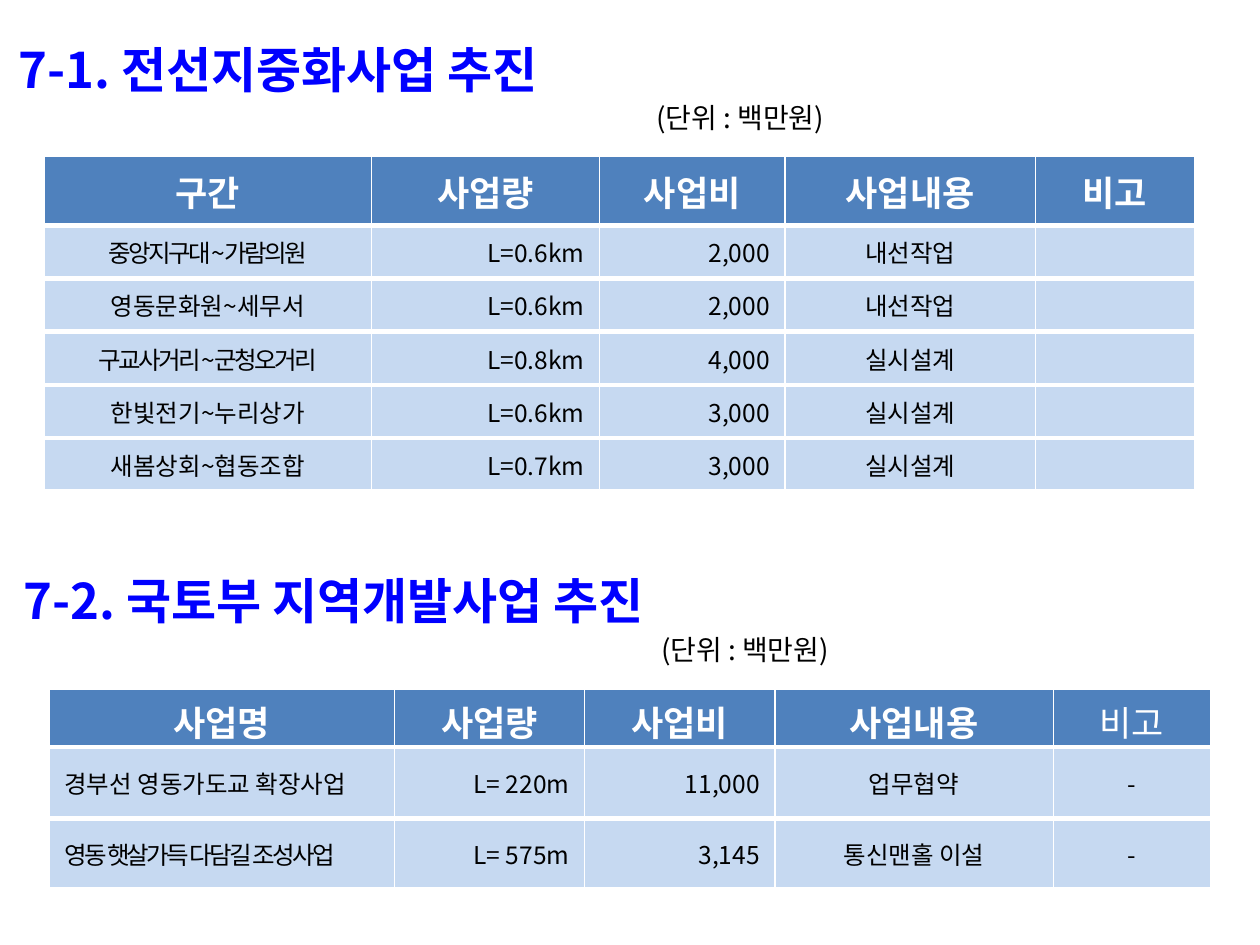
import pptx
import pptx.util
import pptx.dml.color
import pptx.enum.text
import pptx.oxml
import pptx.oxml.ns
from dataclasses import dataclass

Inches, Pt = pptx.util.Inches, pptx.util.Pt
Align = pptx.enum.text.PP_ALIGN
Anchor = pptx.enum.text.MSO_ANCHOR
LEFT, CENTER, RIGHT = Align.LEFT, Align.CENTER, Align.RIGHT


@dataclass(frozen=True)
class Theme:
    font: str = "Noto Sans CJK KR"
    heading: str = "0000FF"
    ink: str = "000000"
    paper: str = "FFFFFF"
    header_fill: str = "4F81BD"
    body_fill: str = "C6D9F1"
    heading_size: int = 28
    unit_size: int = 16
    header_size: int = 20
    body_size: int = 14
    tight: int = -150
    thin: int = 1
    thick: int = 3


THEME = Theme()
UNIT = "(단위 : 백만원)"
TIGHT_LABELS = {"중앙지구대~가람의원", "구교사거리~군청오거리", "영동 햇살가득 다담길 조성사업"}

BURIAL_TABLE = {
    "place": (0.35, 1.24),
    "columns": (2.6, 1.81, 1.47, 1.99, 1.26),
    "height": 2.66,
    "header_height": 0.55,
    "header_bottom": 0.05,
    "aligns": (CENTER, RIGHT, RIGHT, CENTER, CENTER),
    "header": ("구간", "사업량", "사업비", "사업내용", "비고"),
    "rows": (
        ("중앙지구대~가람의원", "L=0.6km", "2,000", "내선작업", ""),
        ("영동문화원~세무서", "L=0.6km", "2,000", "내선작업", ""),
        ("구교사거리~군청오거리", "L=0.8km", "4,000", "실시설계", ""),
        ("한빛전기~누리상가", "L=0.6km", "3,000", "실시설계", ""),
        ("새봄상회~협동조합", "L=0.7km", "3,000", "실시설계", ""),
    ),
    "plain_headers": (),
}
REGION_TABLE = {
    "place": (0.39, 5.47),
    "columns": (2.74, 1.51, 1.51, 2.21, 1.25),
    "height": 1.59,
    "header_height": 0.46,
    "header_bottom": 0,
    "aligns": (LEFT, RIGHT, RIGHT, CENTER, CENTER),
    "header": ("사업명", "사업량", "사업비", "사업내용", "비고"),
    "rows": (
        ("경부선 영동가도교 확장사업", "L= 220m", "11,000", "업무협약", "-"),
        ("영동 햇살가득 다담길 조성사업", "L= 575m", "3,145", "통신맨홀 이설", "-"),
    ),
    "plain_headers": ("비고",),
}


def apply_format(target, values):
    for name, value in values.items():
        setattr(target, name, value)


def write(para, text, size, color, bold=False, **para_format):
    apply_format(para, para_format)
    span = para.add_run()
    span.text = text
    apply_format(span.font, {"name": THEME.font, "size": Pt(size), "bold": bold})
    span.font.color.rgb = pptx.dml.color.RGBColor.from_string(color)
    properties = span.font._element
    east_asian = pptx.oxml.parse_xml(
        f'<a:ea {pptx.oxml.ns.nsdecls("a")} typeface="{THEME.font}"/>')
    properties.append(east_asian)
    if text in TIGHT_LABELS:
        properties.set("spc", str(THEME.tight))


def write_heading(box, left, top, text):
    """Fill a box with a section heading and, indented below it, the unit."""
    apply_format(box, {"left": Inches(left), "top": Inches(top),
                       "width": Inches(10), "height": Inches(0.9)})
    frame = box.text_frame
    apply_format(frame, {"word_wrap": True, "vertical_anchor": Anchor.TOP,
                         "auto_size": pptx.enum.text.MSO_AUTO_SIZE.NONE})
    lines = (
        (frame.paragraphs[0], text, THEME.heading_size, THEME.heading, True, 0.09, 0),
        (frame.add_paragraph(), UNIT, THEME.unit_size, THEME.ink, False, 5.15, 1.5),
    )
    for para, words, size, color, bold, indent, gap in lines:
        write(para, words, size, color, bold, alignment=LEFT,
              line_spacing=1.0, space_before=Pt(gap))
        para._p.get_or_add_pPr().set("marL", str(Inches(indent)))


def add_borders(cell, top):
    widths = {"lnL": THEME.thin, "lnR": THEME.thin, "lnT": top, "lnB": THEME.thick}
    for position, (tag, width) in enumerate(widths.items()):
        line = pptx.oxml.parse_xml(
            f'<a:{tag} {pptx.oxml.ns.nsdecls("a")} w="{Pt(width)}"><a:solidFill>'
            f'<a:srgbClr val="{THEME.paper}"/></a:solidFill></a:{tag}>')
        cell._tc.get_or_add_tcPr().insert(position, line)


def format_cell(cell, fill, side_margin, top_border, bottom_margin=0.05):
    cell.fill.solid()
    cell.fill.fore_color.rgb = pptx.dml.color.RGBColor.from_string(fill)
    apply_format(cell, {"vertical_anchor": Anchor.MIDDLE,
                        "margin_left": Inches(side_margin),
                        "margin_right": Inches(side_margin),
                        "margin_top": Inches(0.05),
                        "margin_bottom": Inches(bottom_margin)})
    add_borders(cell, top_border)


def add_project_table(page, data):
    left, top = data["place"]
    header_height = data["header_height"]
    row_height = (data["height"] - header_height) / len(data["rows"])
    table = page.shapes.add_table(
        len(data["rows"]) + 1, len(data["columns"]), Inches(left), Inches(top),
        Inches(sum(data["columns"])), Inches(data["height"])).table
    table.horz_banding = False
    for column, width in zip(table.columns, data["columns"]):
        column.width = Inches(width)
    for index, row in enumerate(table.rows):
        row.height = Inches(row_height if index else header_height)

    for column, text in enumerate(data["header"]):
        cell = table.cell(0, column)
        format_cell(cell, THEME.header_fill, 0.1, THEME.thin, data["header_bottom"])
        write(cell.text_frame.paragraphs[0], text, THEME.header_size, THEME.paper,
              text not in data["plain_headers"], alignment=CENTER)
    for index, values in enumerate(data["rows"], start=1):
        for column, (text, align) in enumerate(zip(values, data["aligns"])):
            cell = table.cell(index, column)
            format_cell(cell, THEME.body_fill, 0.12, THEME.thick)
            if text:
                write(cell.text_frame.paragraphs[0], text, THEME.body_size,
                      THEME.ink, alignment=align)


def main():
    deck = pptx.Presentation()
    apply_format(deck, {"slide_width": Inches(10), "slide_height": Inches(7.5)})
    page = deck.slides.add_slide(deck.slide_layouts.get_by_name("Title Only"))
    write_heading(page.shapes.title, -0.04, 0.26, "7-1. 전선지중화사업 추진")
    add_project_table(page, BURIAL_TABLE)
    region_box = page.shapes.add_textbox(0, 0, 0, 0)
    write_heading(region_box, 0, 4.48, "7-2. 국토부 지역개발사업 추진")
    add_project_table(page, REGION_TABLE)
    deck.save("out.pptx")


if __name__ == "__main__":
    main()
